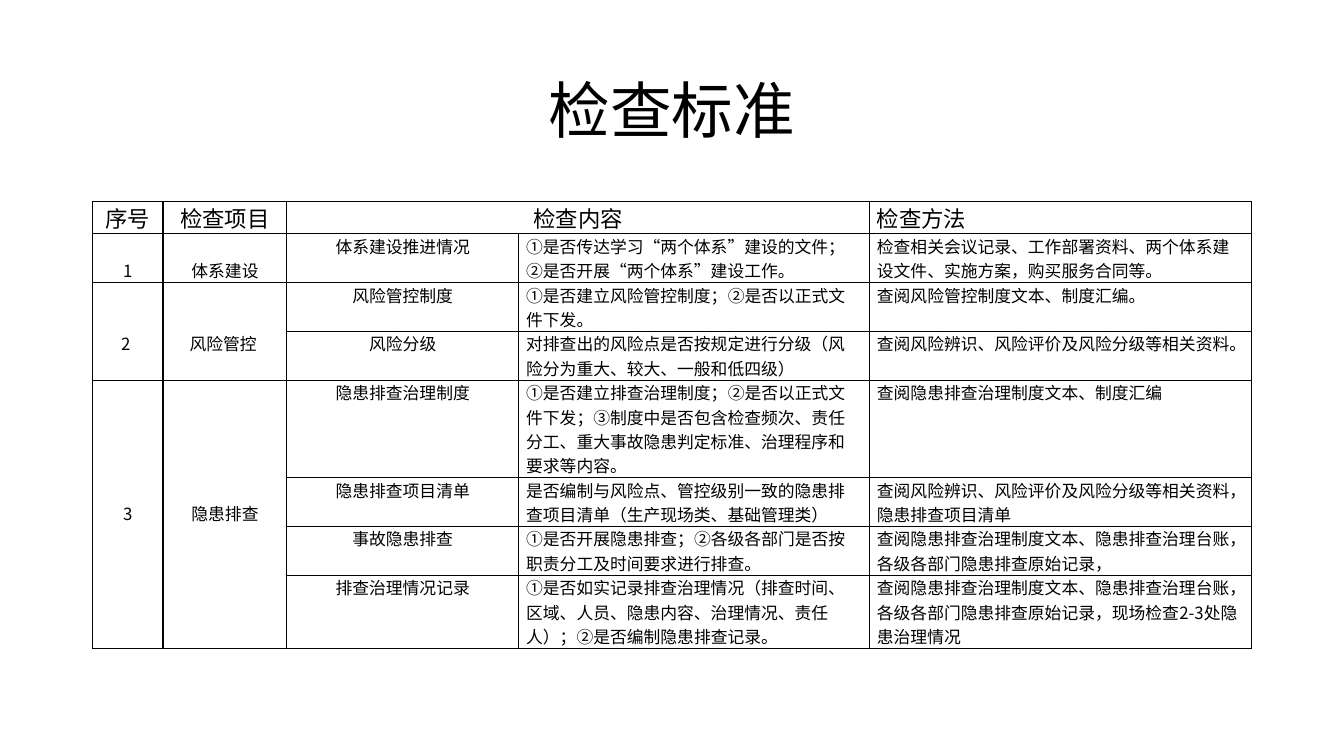
import itertools

import pptx
import pptx.enum.lang
import pptx.enum.text
import pptx.util
import pptx.dml.color
import pptx.oxml
import pptx.oxml.ns

Cm, Pt = pptx.util.Cm, pptx.util.Pt
ALIGN, ANCHOR = pptx.enum.text.PP_ALIGN, pptx.enum.text.MSO_ANCHOR

TITLE = "检查标准"
HEADER = ["序号", "检查项目", "检查内容", "", "检查方法"]
SECTIONS = [
    ("1", "体系建设", 1, [
        ("体系建设推进情况", "①是否传达学习“两个体系”建设的文件；②是否开展“两个体系”建设工作。",
         "检查相关会议记录、工作部署资料、两个体系建设文件、实施方案，购买服务合同等。", 2),
    ]),
    ("2 ", "风险管控 ", 2, [
        ("风险管控制度", "①是否建立风险管控制度；②是否以正式文件下发。",
         "查阅风险管控制度文本、制度汇编。", 2),
        ("风险分级", "对排查出的风险点是否按规定进行分级（风险分为重大、较大、一般和低四级）",
         "查阅风险辨识、风险评价及风险分级等相关资料。", 2),
    ]),
    ("3", "隐患排查", 5, [
        ("隐患排查治理制度",
         "①是否建立排查治理制度；②是否以正式文件下发；③制度中是否包含检查频次、责任分工、重大事故隐患判定标准、治理程序和要求等内容。",
         "查阅隐患排查治理制度文本、制度汇编", 4),
        ("隐患排查项目清单", "是否编制与风险点、管控级别一致的隐患排查项目清单（生产现场类、基础管理类）",
         "查阅风险辨识、风险评价及风险分级等相关资料，隐患排查项目清单", 2),
        ("事故隐患排查", "①是否开展隐患排查；②各级各部门是否按职责分工及时间要求进行排查。",
         "查阅隐患排查治理制度文本、隐患排查治理台账，各级各部门隐患排查原始记录，", 2),
        ("排查治理情况记录",
         "①是否如实记录排查治理情况（排查时间、区域、人员、隐患内容、治理情况、责任人）；②是否编制隐患排查记录。",
         "查阅隐患排查治理制度文本、隐患排查治理台账，各级各部门隐患排查原始记录，现场检查2-3处隐患治理情况", 3),
    ]),
]
COLUMN_WIDTHS = [1.78, 3.12, 5.84, 8.84, 9.63]
COLUMN_ALIGNS = [ALIGN.CENTER, ALIGN.CENTER, ALIGN.CENTER, ALIGN.LEFT, ALIGN.LEFT]
LEFT, TABLE_TOP = 2.33, 5.08
HEADER_HEIGHT, LINE_HEIGHT = 0.81, 0.61
THEME = {
    "ink": "000000", "border": "080000", "border_width": 1,
    "title": 44, "header": 16, "body": 12,
    "font": "Noto Sans CJK SC", "marker_font": "Arial", "markers": "①②③",
}


def apply(target, values):
    for name, value in values.items():
        setattr(target, name, value)


def write(frame, text, size, align, line_spacing=None):
    para = frame.paragraphs[0]
    apply(para, {"alignment": align, "line_spacing": line_spacing})
    para._p.get_or_add_pPr().set("hangingPunct", "1")
    for marked, letters in itertools.groupby(text, lambda letter: letter in THEME["markers"]):
        span = para.add_run()
        span.text = "".join(letters)
        face = THEME["marker_font" if marked else "font"]
        apply(span.font, {
            "name": face, "size": Pt(size), "bold": False,
            "language_id": pptx.enum.lang.MSO_LANGUAGE_ID.SIMPLIFIED_CHINESE,
        })
        span.font.color.rgb = pptx.dml.color.RGBColor.from_string(THEME["ink"])
        east_asian = pptx.oxml.parse_xml(
            f'<a:ea {pptx.oxml.ns.nsdecls("a")} typeface="{face}"/>')
        span.font._element.find(pptx.oxml.ns.qn("a:latin")).addnext(east_asian)


def style_cell(cell):
    apply(cell, {
        "margin_left": Cm(0.19), "margin_right": Cm(0.19),
        "margin_top": 0, "margin_bottom": 0, "vertical_anchor": ANCHOR.TOP,
    })
    cell.fill.background()
    for index, side in enumerate("LRTB"):
        line = pptx.oxml.parse_xml(
            f'<a:ln{side} {pptx.oxml.ns.nsdecls("a")} w="{Pt(THEME["border_width"])}">'
            f'<a:solidFill><a:srgbClr val="{THEME["border"]}"/></a:solidFill>'
            f'<a:prstDash val="solid"/></a:ln{side}>')
        cell._tc.get_or_add_tcPr().insert(index, line)


def add_title(page):
    box = page.shapes.title
    apply(box, {"left": Cm(LEFT), "top": Cm(1.01), "width": Cm(29.21), "height": Cm(3.68)})
    apply(box.text_frame, {
        "vertical_anchor": ANCHOR.MIDDLE, "word_wrap": True,
        "auto_size": pptx.enum.text.MSO_AUTO_SIZE.NONE,
    })
    write(box.text_frame, TITLE, THEME["title"], ALIGN.CENTER, 0.9)


def add_standards(page):
    items = [item for section in SECTIONS for item in section[3]]
    heights = [HEADER_HEIGHT] + [item[3] * LINE_HEIGHT for item in items]
    grid = page.shapes.add_table(
        len(heights), len(COLUMN_WIDTHS), Cm(LEFT), Cm(TABLE_TOP),
        Cm(sum(COLUMN_WIDTHS)), Cm(sum(heights))).table
    apply(grid, {"first_row": False, "horz_banding": False})
    for column, width in zip(grid.columns, COLUMN_WIDTHS):
        column.width = Cm(width)
    for row, height in zip(grid.rows, heights):
        row.height = Cm(height)
    for cell in grid.iter_cells():
        style_cell(cell)

    grid.cell(0, 2).merge(grid.cell(0, 3))
    for index, label in enumerate(HEADER):
        if label:
            write(grid.cell(0, index).text_frame, label, THEME["header"], COLUMN_ALIGNS[index])

    first = 1
    for number, project, lines_above, section_items in SECTIONS:
        last = first + len(section_items) - 1
        for index, label in enumerate((number, project)):
            cell = grid.cell(first, index)
            if last > first:
                cell.merge(grid.cell(last, index))
            cell.margin_top = Cm(lines_above * LINE_HEIGHT)
            write(cell.text_frame, label, THEME["body"], COLUMN_ALIGNS[index])
        for row, item in enumerate(section_items, first):
            for index, text in enumerate(item[:3], 2):
                write(grid.cell(row, index).text_frame, text, THEME["body"], COLUMN_ALIGNS[index])
        first = last + 1


def main():
    """Build the inspection standards slide."""
    deck = pptx.Presentation()
    apply(deck, {"slide_width": Cm(33.87), "slide_height": Cm(19.05)})
    page = deck.slides.add_slide(deck.slide_layouts[5])
    add_title(page)
    add_standards(page)
    deck.save("out.pptx")


if __name__ == "__main__":
    main()
